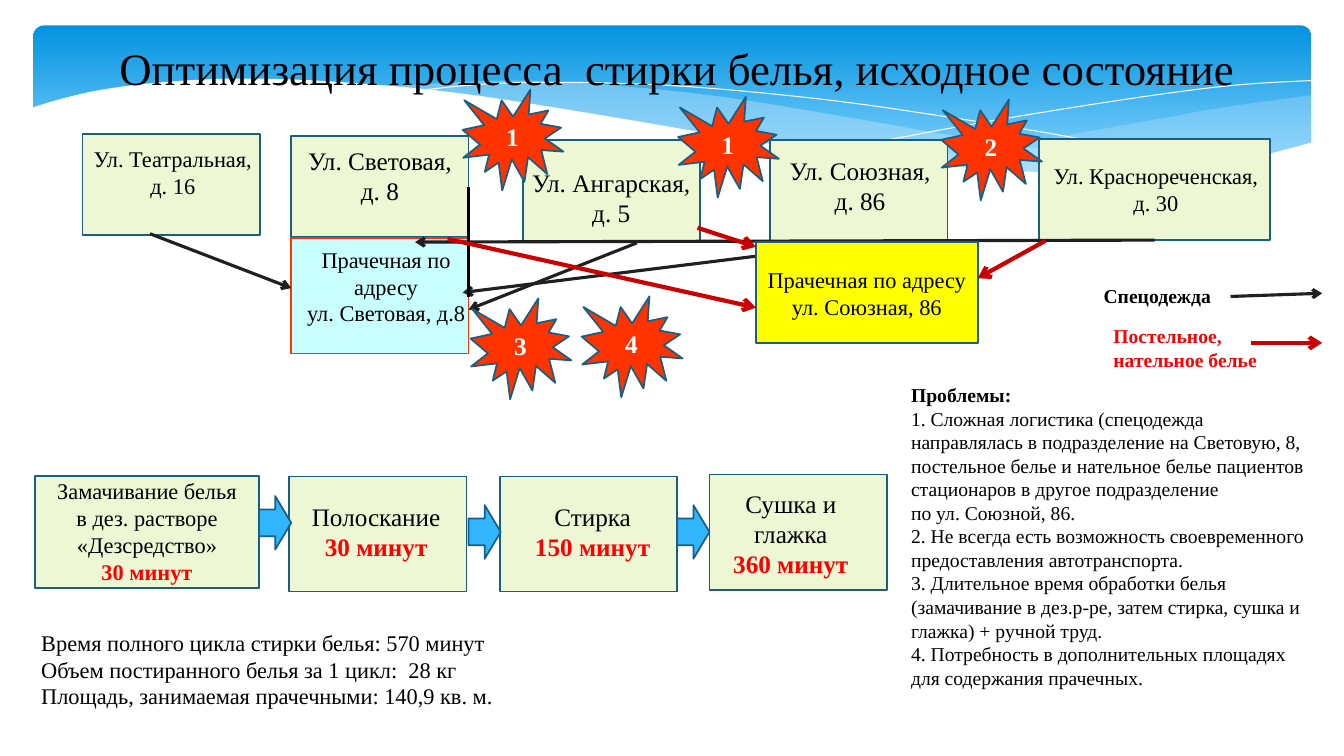
from dataclasses import dataclass

from lxml import etree
from pptx import Presentation
from pptx.dml.color import RGBColor
from pptx.enum.shapes import MSO_CONNECTOR, MSO_SHAPE
from pptx.enum.text import MSO_ANCHOR, PP_ALIGN
from pptx.oxml.ns import qn
from pptx.util import Cm, Pt

RECT, ROUND_RECT = MSO_SHAPE.RECTANGLE, MSO_SHAPE.ROUNDED_RECTANGLE
SEAL, RIGHT_ARROW = MSO_SHAPE.EXPLOSION1, MSO_SHAPE.RIGHT_ARROW
STRAIGHT = MSO_CONNECTOR.STRAIGHT
LEFT, CENTER, RIGHT = PP_ALIGN.LEFT, PP_ALIGN.CENTER, PP_ALIGN.RIGHT
MIDDLE, BOTTOM = MSO_ANCHOR.MIDDLE, MSO_ANCHOR.BOTTOM


@dataclass(frozen=True)
class Theme:
    font: str = "Times New Roman"
    title: int = 32
    large: int = 18
    body: int = 16
    small: int = 14
    black: str = "000000"
    white: str = "FFFFFF"
    red: str = "FF0000"
    outline: str = "195F84"
    card: str = "EDF7D3"
    aqua: str = "C8FEFD"
    yellow: str = "FFFF00"
    seal: str = "FF3300"
    arrow: str = "31B6FD"
    workwear: str = "202020"
    linen: str = "CC0000"
    sky_top: str = "0293E0"
    sky_bottom: str = "83D3FE"
    wave: str = "C6E7FC"


T = Theme()


def rgb(value):
    return RGBColor.from_string(value)


def write(tf, text, size, color=T.black, align=CENTER, bold=()):
    """Fill a text frame; bold lists the indexes of the bold paragraphs."""
    tf.text = text
    for i, p in enumerate(tf.paragraphs):
        p.alignment = align
        for r in p.runs:
            r.font.name, r.font.size = T.font, Pt(size)
            r.font.color.rgb = rgb(color)
            r.font.bold = i in bold


def add_text(s, x, y, w, h, text, size, wrap=False, **style):
    tf = s.shapes.add_textbox(Cm(x), Cm(y), Cm(w), Cm(h)).text_frame
    tf.word_wrap = wrap
    write(tf, text, size, **style)
    return tf


def add_block(s, kind, x, y, w, h, fill, line=T.outline):
    sp = s.shapes.add_shape(kind, Cm(x), Cm(y), Cm(w), Cm(h))
    sp.shadow.inherit = False
    sp.fill.solid()
    sp.fill.fore_color.rgb = rgb(fill)
    sp.line.color.rgb = rgb(line)
    sp.line.width = Pt(1.25)
    return sp


def add_line(s, x1, y1, x2, y2, color, width, arrow=True):
    line = s.shapes.add_connector(STRAIGHT, Cm(x1), Cm(y1), Cm(x2), Cm(y2))
    line.line.color.rgb = rgb(color)
    line.line.width = Pt(width)
    if arrow:
        etree.SubElement(line.line._get_or_add_ln(), qn("a:tailEnd"), type="arrow")
    etree.SubElement(line._element.spPr, qn("a:effectLst"))
    return line


def smooth(points, steps=5):
    """Return points along a Catmull-Rom curve through the given ones."""
    ends = [points[0], *points, points[-1]]
    curve = [points[0]]
    for a, b, c, d in zip(ends, ends[1:], ends[2:], ends[3:]):
        for t in (i / steps for i in range(1, steps + 1)):
            curve.append(tuple(
                (2 * q + (r - p) * t + (2 * p - 5 * q + 4 * r - u) * t ** 2
                 + (3 * q - p - 3 * r + u) * t ** 3) / 2
                for p, q, r, u in zip(a, b, c, d)))
    return curve


def add_outline(s, points, fill=None, opacity=100, line=None):
    start, *rest = [(Cm(x), Cm(y)) for x, y in points]
    builder = s.shapes.build_freeform(*start)
    builder.add_line_segments(rest, close=fill is not None)
    sp = builder.convert_to_shape()
    sp.shadow.inherit = False
    if fill:
        sp.fill.solid()
        sp.fill.fore_color.rgb = rgb(fill)
        color = sp.fill._xPr.find(qn("a:solidFill"))[0]
        etree.SubElement(color, qn("a:alpha"), val=str(opacity * 1000))
        sp.line.fill.background()
    else:
        sp.fill.background()
        sp.line.color.rgb = rgb(line)
        sp.line.width = Pt(0)


def draw_backdrop(s, x, y, w, h):
    sky = add_block(s, ROUND_RECT, x, y, w, h, T.sky_top)
    sky.adjustments[0] = 0.07
    sky.line.fill.background()
    sky.fill.gradient()
    sky.fill.gradient_angle = 270
    for stop, color, position in zip(sky.fill.gradient_stops, (T.sky_top, T.sky_bottom), (0, 0.9)):
        stop.color.rgb = rgb(color)
        stop.position = position

    def curve(*points):
        return smooth([(x + px, y + py) for px, py in points])

    right_wave = (
        curve((32.26, 1.75), (29.89, 2.08), (28.34, 2.36), (24.71, 2.99), (21.59, 3.42))
        + curve((21.59, 3.42), (23.98, 3.65), (26.77, 3.73), (29.59, 3.55), (32.26, 2.94)))
    long_wave = (
        curve((29.44, 3.6), (26.52, 3.27), (23.09, 2.76), (20.5, 2.31), (17.5, 1.82),
              (14.91, 1.54), (12.04, 1.39), (8.86, 1.54))
        + curve((8.86, 1.54), (11.45, 1.82), (14.4, 2.31), (18.36, 2.99), (21.72, 3.45),
                (24.53, 3.68), (26.9, 3.75), (29.44, 3.6)))
    add_outline(s, right_wave, T.wave, 29)
    add_outline(s, long_wave, T.wave, 40)
    add_outline(s, curve((9.65, 1.65), (11.48, 1.47), (13.82, 1.44), (16.46, 1.54), (19.78, 1.85),
                         (22.73, 2.26), (26.11, 2.81), (29.92, 3.58)), line=T.white)
    add_outline(s, curve((19.96, 3.2), (22.73, 2.66), (25.5, 2.18), (28.52, 1.72),
                         (30.48, 1.49), (32.23, 1.39)), line=T.white)
    ground = curve((32.26, 2.94), (30.33, 3.4), (27.51, 3.7), (24.94, 3.68), (21.79, 3.42),
                   (18.77, 3.02), (14.3, 2.26), (10.67, 1.7), (7.62, 1.42), (5.13, 1.34),
                   (3.17, 1.44), (1.73, 1.62), (0.71, 1.85), (-0.05, 2.08))
    add_outline(s, ground + [(x - 0.05, y + 5.05), (x + 32.26, y + 5.05)], T.white)


def draw_title(s, x, y, w, h):
    tf = add_text(s, x, y, w, h, "Оптимизация процесса  стирки белья, исходное состояние",
                  T.title, wrap=True)
    tf.vertical_anchor = BOTTOM


def draw_routes(s, x, y):
    """Addresses, laundries, the routes between them and problem marks."""
    def card(cx, cy, w, h, dx, dy, tw, text, size, fill=T.card, line=T.outline, wrap=False):
        sp = add_block(s, RECT, x + cx, y + cy, w, h, fill, line)
        add_text(s, x + cx + dx, y + cy + dy, tw, 1.8, text, size, wrap)
        return sp

    def route(x1, y1, x2, y2, color, width, arrow=True):
        return add_line(s, x + x1, y + y1, x + x2, y + y2, color, width, arrow)

    for cx, cy, w, dx, dy, tw, text, size in (
            (0.08, 1.38, 4.47, 0, 0.15, 4.55, "Ул. Театральная,\nд. 16", T.body),
            (5.34, 1.43, 4.47, 0.15, 0.1, 4.17, "Ул. Световая,\nд. 8", T.large),
            (11.18, 1.53, 4.47, -0.05, 0.56, 4.55, "Ул. Ангарская,\nд. 5", T.large),
            (17.41, 1.53, 4.47, 0.22, 0.25, 4.09, "Ул. Союзная,\nд. 86", T.large),
            (24.19, 1.51, 5.82, 0.07, 0.45, 5.74, "Ул. Краснореченская,\nд. 30", T.body)):
        last = card(cx, cy, w, 2.54, dx, dy, tw, text, size)
    card(5.34, 3.99, 4.47, 2.92, -0.25, 0.08, 5.28,
         "Прачечная по адресу\nул. Световая, д.8", T.body, T.aqua, T.seal, wrap=True)
    for ends in ((1.78, 3.89, 5.34, 5.26), (18.96, 4.22, 9.66, 5.37), (14.05, 4.12, 9.81, 5.8)):
        route(*ends, T.workwear, 2.25)
    route(27.1, 4.05, 8.46, 4.1, T.workwear, 2.25).begin_connect(last, 2)
    card(17.05, 4.1, 5.59, 2.54, 0, 0.48, 5.59,
         "Прачечная по адресу\nул. Союзная, 86", T.body, T.yellow)
    route(9.81, 2.72, 9.81, 5.49, T.black, 2.25, arrow=False)
    for ends in ((9.28, 4.02, 17.05, 5.75), (15.58, 3.74, 17.05, 4.22), (24.34, 4.07, 22.64, 5.01)):
        route(*ends, T.linen, 3)
    for sx, sy, number in ((9.66, 0.26, "1"), (21.72, 0.51, "2"), (15.09, 0.44, "1"),
                           (9.86, 5.52, "3"), (12.66, 5.47, "4")):
        seal = add_block(s, SEAL, x + sx, y + sy, 2.54, 2.54, T.seal)
        seal.text_frame.vertical_anchor = MIDDLE
        write(seal.text_frame, number, T.large, T.white, bold=(0,))


def draw_legend(s, x, y):
    add_text(s, x, y, 4, 0.86, "Спецодежда", T.small, wrap=True, align=RIGHT, bold=(0,))
    add_line(s, x + 4.24, y + 0.43, x + 6.55, y + 0.35, T.workwear, 2.25)
    add_text(s, x + 1.04, y + 1.01, 4.17, 1.45, "Постельное,\nнательное белье", T.small,
             color=T.red, align=LEFT, bold=(0, 1))
    add_line(s, x + 4.75, y + 1.6, x + 6.55, y + 1.6, T.linen, 3)


def draw_process(s, x, y):
    for cx, cy, w, h, dx, dy, tw, text, size, wrap in (
            (0, 0.03, 5.64, 2.82, 0.2, -0.08, 5.23,
             "Замачивание белья\nв дез. растворе\n«Дезсредство»\n30 минут", T.body, False),
            (6.4, 0.05, 4.47, 2.9, 0.3, 0.49, 3.78, "Полоскание\n30 минут", T.large, False),
            (11.71, 0.05, 4.47, 2.9, 0.53, 0.49, 3.61, "Стирка\n150 минут", T.large, False),
            (16.99, 0, 4.47, 2.9, -0.1, 0.21, 4.3, "Сушка и глажка\n360 минут", T.large, True)):
        add_block(s, RECT, x + cx, y + cy, w, h, T.card)
        tf = add_text(s, x + cx + dx, y + cy + dy, tw, 1.8, text, size, wrap)
        duration = tf.paragraphs[-1].runs[0].font
        duration.bold = True
        duration.color.rgb = rgb(T.red)
    for ax, ay in ((5.64, 0.54), (10.92, 0.77), (16.18, 0.77)):
        add_block(s, RIGHT_ARROW, x + ax, y + ay, 0.81, 1.35, T.arrow)


def draw_problems(s, x, y, w, h):
    add_text(s, x, y, w, h, "\n".join((
        "Проблемы:",
        "1. Сложная логистика (спецодежда направлялась в подразделение на Световую, 8, "
        "постельное белье и нательное белье пациентов стационаров в другое подразделение",
        "по ул. Союзной, 86.",
        "2. Не всегда есть возможность своевременного предоставления автотранспорта.",
        "3. Длительное время обработки белья (замачивание в дез.р-ре, затем стирка, "
        "сушка и глажка) + ручной труд.",
        "4. Потребность в дополнительных площадях для содержания прачечных.",
    )), T.small, wrap=True, align=LEFT, bold=(0,))


def draw_summary(s, x, y, w, h):
    add_text(s, x, y, w, h, "Время полного цикла стирки белья: 570 минут\n"
             "Объем постиранного белья за 1 цикл:  28 кг\n"
             "Площадь, занимаемая прачечными: 140,9 кв. м.", T.body, align=LEFT)


def main():
    prs = Presentation()
    prs.slide_width, prs.slide_height = Cm(33.87), Cm(19.05)
    s = prs.slides.add_slide(prs.slide_layouts[6])
    draw_backdrop(s, 0.84, 0.64, 32.21, 3.96)
    draw_title(s, 2.34, 0.48, 29.46, 2.03)
    draw_routes(s, 2, 2)
    draw_legend(s, 26.77, 7.04)
    draw_problems(s, 22.71, 9.53, 10.77, 8.03)
    draw_process(s, 0.89, 11.96)
    draw_summary(s, 0.79, 15.72, 12.04, 2.31)
    prs.save("out.pptx")


if __name__ == "__main__":
    main()
